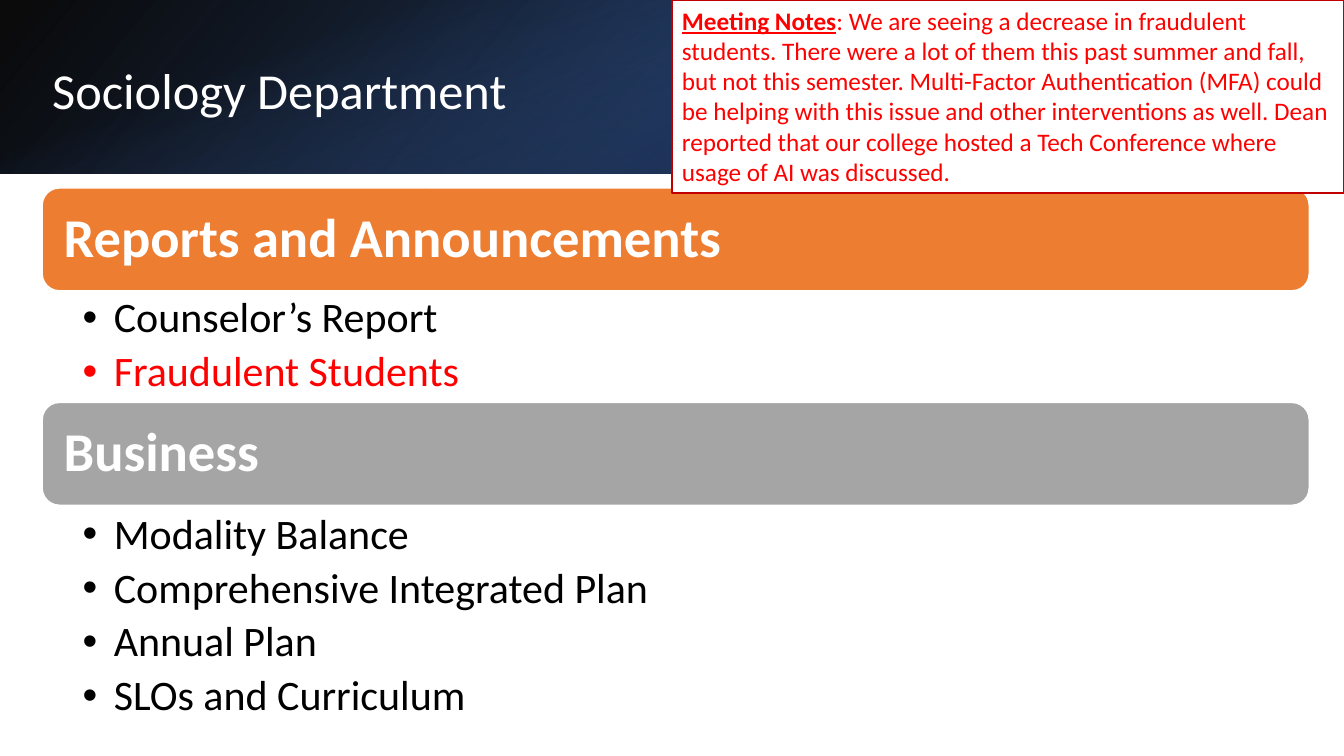
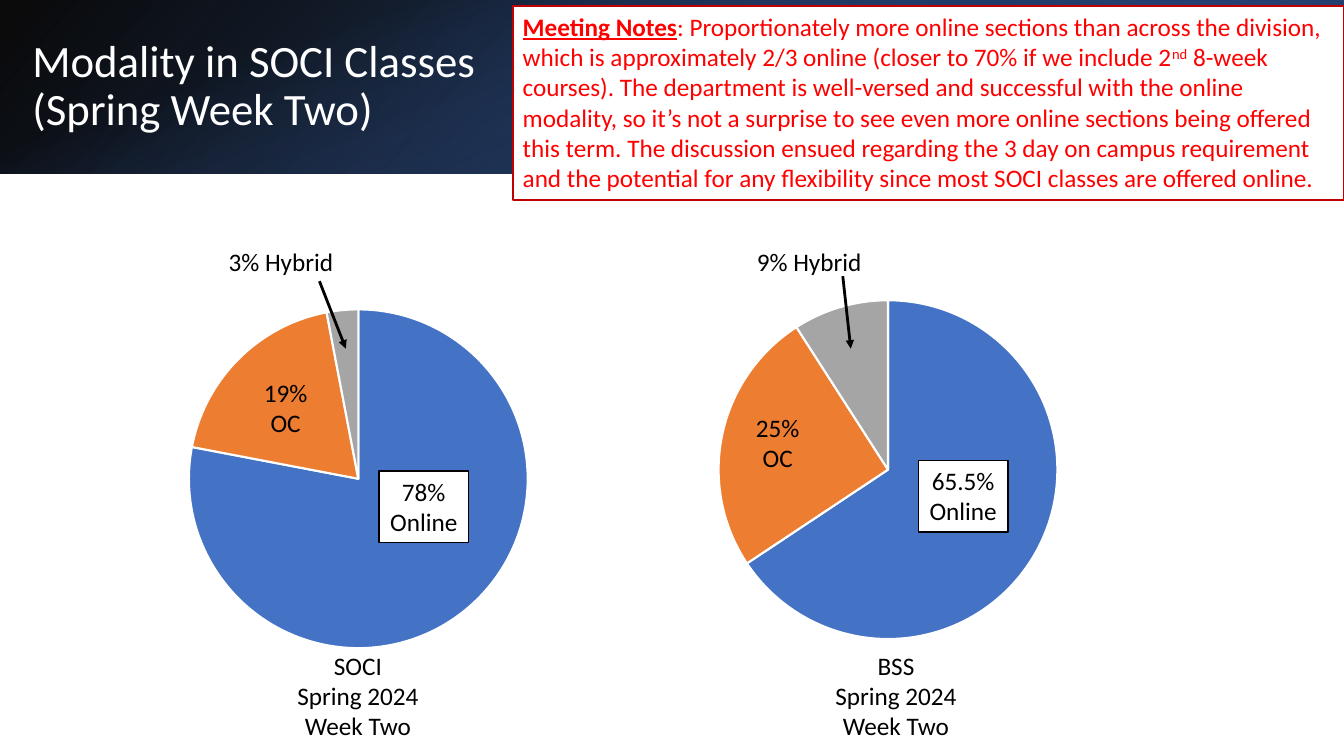
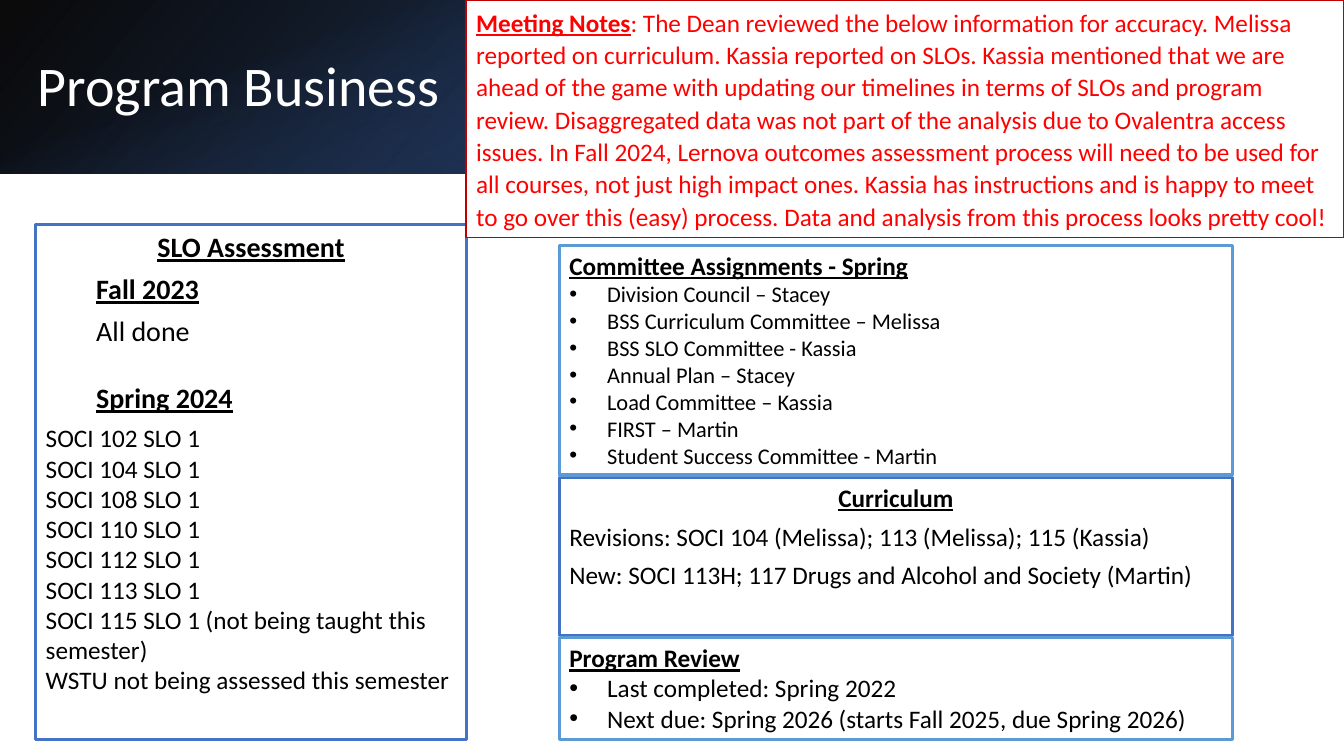
from dataclasses import dataclass

from lxml import etree
from pptx import Presentation
from pptx.chart.data import CategoryChartData
from pptx.dml.color import RGBColor
from pptx.enum.chart import XL_CHART_TYPE as Chart
from pptx.enum.shapes import MSO_CONNECTOR as Connector, MSO_SHAPE as Preset
from pptx.enum.text import MSO_ANCHOR as Anchor, PP_ALIGN as Align
from pptx.oxml.ns import qn
from pptx.slide import Slide
from pptx.util import Pt

WIDTH, HEIGHT, BAND = 960, 540, 124
FONT = "Calibri"
COLORS = {
    "black": "000000", "white": "FFFFFF", "red": "FF0000", "dark_red": "C00000",
    "blue": "4472C4", "mid_blue": "2F5597", "navy": "203864", "sky": "5B9BD5",
    "orange": "ED7D31", "gray": "A5A5A5", "gold": "FFC000",
}
SLICES = ("blue", "orange", "gray", "gold")

Box = tuple[float, float, float, float]
Point = tuple[float, float]


@dataclass(frozen=True)
class Run:
    text: str
    heading: bool = False
    superscript: bool = False


@dataclass(frozen=True)
class Para:
    """One paragraph; None takes the format of its text block."""
    content: str | tuple[Run, ...]
    heading: bool = False
    size: float | None = None
    color: str | None = None
    align: Align | None = None
    indent: float = 0
    bullet: bool = False
    after: float = 0


@dataclass(frozen=True)
class Sheen:
    """One translucent gradient layer of the title band."""
    box: Box
    stops: tuple[tuple[float, str, int], ...]
    angle: float
    rotation: float = 0
    flip: bool = False


@dataclass(frozen=True)
class Section:
    heading: str
    color: str
    top: float
    list_top: float
    list_height: float
    items: tuple[Para, ...]


@dataclass(frozen=True)
class Modality:
    """A pie of class modalities with its labels."""
    group: str
    frame: Box
    shares: tuple[float, ...]
    online: str
    online_at: Point
    campus: str
    campus_at: Point
    hybrid: str
    hybrid_at: Point
    arrow: tuple[Point, Point]
    caption_at: Point


SHEENS = (
    Sheen((0, 0, WIDTH, BAND), ((0, "black", 96), (1, "mid_blue", 100)), 140, flip=True),
    Sheen((640, 0, 320, BAND), ((0.19, "navy", 68), (1, "blue", 79)), 320, 180, True),
    Sheen(((WIDTH - BAND) / 2, (BAND - WIDTH) / 2, BAND, WIDTH),
          ((0.23, "blue", 0), (0.99, "black", 74)), 340, 90),
)


def rgb(name: str) -> RGBColor:
    return RGBColor.from_string(COLORS[name])


def points(values: tuple[float, ...]) -> list[Pt]:
    return [Pt(value) for value in values]


def add_text(slide: Slide, box: Box, paras: tuple[Para, ...], *, size: float = 18,
             color: str = "black", align: Align = Align.LEFT, anchor: Anchor = Anchor.TOP,
             spacing: float = 1, wrap: bool = True, preset: Preset = Preset.RECTANGLE,
             fill: str | None = None, line: str | None = None, weight: float = 1,
             left: float = 7.2, right: float = 7.2, underline: bool = True) -> None:
    """Draw a text block, with a fill and an outline when they are given."""
    if fill or line:
        block = slide.shapes.add_shape(preset, *points(box))
        block.shadow.inherit = False
        if fill:
            block.fill.solid()
            block.fill.fore_color.rgb = rgb(fill)
        else:
            block.fill.background()
        block.line.color.rgb = rgb(line or fill)
        block.line.width = Pt(weight)
    else:
        block = slide.shapes.add_textbox(*points(box))
    frame = block.text_frame
    frame.word_wrap = wrap
    frame.vertical_anchor = anchor
    frame.margin_left, frame.margin_right = points((left, right))
    frame.margin_top = frame.margin_bottom = Pt(3.6)
    for index, para in enumerate(paras):
        paragraph = frame.add_paragraph() if index else frame.paragraphs[0]
        paragraph.alignment = para.align or align
        paragraph.line_spacing = spacing
        paragraph.space_after = Pt(para.after)
        if para.indent:
            properties = paragraph._p.get_or_add_pPr()
            properties.set("marL", str(Pt(para.indent)))
            if para.bullet:
                properties.set("indent", str(-Pt(para.indent)))
                etree.SubElement(properties, qn("a:buFont"), typeface="Arial")
                etree.SubElement(properties, qn("a:buChar"), char="•")
        content = para.content
        runs = (Run(content, para.heading),) if isinstance(content, str) else content
        for part in runs:
            run = paragraph.add_run()
            run.text = part.text
            font = run.font
            font.name, font.size = FONT, Pt(para.size or size)
            font.color.rgb = rgb(para.color or color)
            font.bold = part.heading
            font.underline = part.heading and underline
            if part.superscript:
                run._r.get_or_add_rPr().set("baseline", "30000")


def add_band(slide: Slide) -> None:
    for sheen in SHEENS:
        layer = slide.shapes.add_shape(Preset.RECTANGLE, *points(sheen.box))
        layer.shadow.inherit = False
        layer.line.fill.background()
        layer.rotation = sheen.rotation
        if sheen.flip:
            layer.element.spPr.get_or_add_xfrm().set("flipH", "1")
        layer.fill.gradient()
        layer.fill.gradient_angle = 360 - sheen.angle
        for stop, (position, color, _) in zip(layer.fill.gradient_stops, sheen.stops):
            stop.position = position
            stop.color.rgb = rgb(color)
        tints = layer.element.spPr.iter(qn("a:srgbClr"))
        for tint, (_, _, opacity) in zip(list(tints), sheen.stops):
            etree.SubElement(tint, qn("a:alpha"), val=str(opacity * 1000))


def start_slide(deck: Presentation, title: str, box: Box, size: float) -> Slide:
    slide = deck.slides.add_slide(deck.slide_layouts[6])
    add_band(slide)
    add_text(slide, box, (Para(title),), size=size, color="white",
             anchor=Anchor.MIDDLE, spacing=0.9)
    return slide


def add_notes_box(slide: Slide, box: Box, *runs: Run, spacing: float = 1) -> None:
    add_text(slide, box, (Para((Run("Meeting Notes", heading=True), *runs)),),
             color="red", fill="white", line="dark_red", weight=1.25, spacing=spacing)


def add_arrow(slide: Slide, start: Point, end: Point) -> None:
    arrow = slide.shapes.add_connector(Connector.STRAIGHT, *points((*start, *end)))
    arrow.line.color.rgb = rgb("black")
    arrow.line.width = Pt(2)
    etree.SubElement(arrow.line._get_or_add_ln(), qn("a:tailEnd"), type="triangle")
    etree.SubElement(arrow.element.spPr, qn("a:effectLst"))


def add_pie(slide: Slide, box: Box, shares: tuple[float, ...], diameter: float = 242) -> None:
    data = CategoryChartData()
    data.categories = [str(number + 1) for number in range(len(shares))]
    data.add_series("Series 1", shares)
    chart = slide.shapes.add_chart(Chart.PIE, *points(box), data).chart
    chart.has_title = chart.has_legend = False
    chart.font.name, chart.font.size = FONT, Pt(10)
    chart.font.color.rgb = rgb("black")
    plot = chart.plots[0]
    plot.vary_by_categories = False
    for index, color in enumerate(SLICES[:len(shares)]):
        look = plot.series[0].points[index].format
        look.fill.solid()
        look.fill.fore_color.rgb = rgb(color)
        look.line.color.rgb = rgb("white")
        look.line.width = Pt(1.5)
    area = chart._chartSpace.chart.plotArea
    for old in area.findall(qn("c:layout")):
        area.remove(old)
    layout = etree.Element(qn("c:layout"))
    area.insert(0, layout)
    manual = etree.SubElement(layout, qn("c:manualLayout"))
    wide, high = diameter / box[2], diameter / box[3]
    for tag, value in (("layoutTarget", "inner"), ("xMode", "edge"), ("yMode", "edge"),
                       ("x", (1 - wide) / 2), ("y", (1 - high) / 2), ("w", wide), ("h", high)):
        etree.SubElement(manual, qn(f"c:{tag}"), val=str(value))


def add_modality(slide: Slide, pie: Modality) -> None:
    add_pie(slide, pie.frame, pie.shares)
    centered = {"align": Align.CENTER, "wrap": False}
    add_text(slide, (*pie.online_at, 64, 51), (Para(pie.online), Para("Online")),
             fill="white", line="black", **centered)
    add_text(slide, (*pie.campus_at, 50, 51), (Para(pie.campus), Para("OC")), **centered)
    add_text(slide, (*pie.hybrid_at, 90, 29), (Para(pie.hybrid),), wrap=False)
    add_arrow(slide, *pie.arrow)
    add_text(slide, (*pie.caption_at, 102, 73),
             (Para(pie.group), Para("Spring 2024"), Para("Week Two")), **centered)


def bullets(*items: str, indent: float = 27, after: float = 0,
            size: float | None = None) -> tuple[Para, ...]:
    return tuple(Para(item, size=size, indent=indent, bullet=True, after=after)
                 for item in items)


def build_agenda(deck: Presentation) -> None:
    slide = start_slide(deck, "Sociology Department", (30.2, 32, 610, 69), 36)
    agenda_list = {"indent": 22.3, "after": 6}
    sections = (
        Section("Reports and Announcements", "orange", 134.3, 208.4, 81, (
            *bullets("Counselor’s Report", **agenda_list),
            Para("Fraudulent Students", color="red", bullet=True, **agenda_list))),
        Section("Business", "gray", 287.5, 363, 162, bullets(
            "Modality Balance", "Comprehensive Integrated Plan", "Annual Plan",
            "SLOs and Curriculum", **agenda_list)),
    )
    left, width, bar_height = 30.2, 905, 73.4
    for section in sections:
        add_text(slide, (left, section.top, width, bar_height),
                 (Para(section.heading, heading=True),), size=39, color="white",
                 anchor=Anchor.MIDDLE, spacing=0.9, preset=Preset.ROUNDED_RECTANGLE,
                 fill=section.color, line="white", left=11.8, right=11.8, underline=False)
        add_text(slide, (left, section.list_top, width, section.list_height),
                 section.items, size=30, spacing=0.9, left=28.8, right=21.6)
    add_notes_box(slide, (480, 0, 480, 138), Run(
        ": We are seeing a decrease in fraudulent students. There were a lot of them this "
        "past summer and fall, but not this semester. Multi-Factor Authentication (MFA) could "
        "be helping with this issue and other interventions as well. Dean reported that our "
        "college hosted a Tech Conference where usage of AI was discussed."))


def build_modality(deck: Presentation) -> None:
    slide = start_slide(deck, "Modality in SOCI Classes (Spring Week Two)",
                        (16, 43.5, 381, 37.5), 32)
    pies = (
        Modality("SOCI", (93.6, 211, 324.7, 262), (78, 19, 3), "78%", (270.7, 336.5),
                 "19%", (179, 265.7), "3% Hybrid", (156.2, 172.5),
                 ((228.2, 200.9), (247, 249)), (204.7, 460.8)),
        Modality("BSS", (494.6, 204.5, 279.4, 262), (65, 25, 9, 0), "65.5%", (656, 329),
                 "25%", (530.5, 290.9), "9% Hybrid", (533.5, 172.5),
                 ((602, 197.3), (607.7, 249)), (589, 460.8)),
    )
    for pie in pies:
        add_modality(slide, pie)
    add_notes_box(
        slide, (366.3, 4.5, 593.7, 138.2),
        Run(": Proportionately more online sections than across the division, which is "
            "approximately 2/3 online (closer to 70% if we include 2"),
        Run("nd", superscript=True),
        Run(" 8-week courses). The department is well-versed and successful with the online "
            "modality, so it’s not a surprise to see even more online sections being offered "
            "this term. The discussion ensued regarding the 3 day on campus requirement and "
            "the potential for any flexibility since most SOCI classes are offered online."))


def build_business(deck: Presentation) -> None:
    slide = start_slide(deck, "Program Business", (20, 29.5, 307.5, 67), 40)
    courses = (*(f"SOCI {number} SLO 1" for number in (102, 104, 108, 110, 112, 113)),
               "SOCI 115 SLO 1 (not being taught this semester)",
               "WSTU not being assessed this semester")
    add_text(slide, (25.6, 160.5, 307.5, 368), (
        Para("SLO Assessment", heading=True, size=20, align=Align.CENTER, after=6),
        Para("Fall 2023", heading=True, size=20, indent=36, after=6),
        Para("All done", size=20, indent=36, after=23.9),
        Para("Spring 2024", heading=True, size=20, indent=36, after=6),
        *map(Para, courses)), line="blue", weight=2.25)
    left, width = 399.6, 480.7
    add_text(slide, (left, 341, width, 113), (
        Para("Curriculum", heading=True, align=Align.CENTER, after=6),
        Para("Revisions: SOCI 104 (Melissa); 113 (Melissa); 115 (Kassia)", after=6),
        Para("New: SOCI 113H; 117 Drugs and Alcohol and Society (Martin)", after=6)),
        line="blue", weight=2.25)
    add_text(slide, (left, 455.4, width, 72.7), (
        Para("Program Review", heading=True),
        *bullets("Last completed: Spring 2022",
                 "Next due: Spring 2026 (starts Fall 2025, due Spring 2026)")),
        line="sky", weight=2.5)
    add_text(slide, (left, 175.2, width, 164), (
        Para("Committee Assignments - Spring", heading=True),
        *bullets("Division Council – Stacey", "BSS Curriculum Committee – Melissa",
                 "BSS SLO Committee - Kassia", "Annual Plan – Stacey",
                 "Load Committee – Kassia", "FIRST – Martin",
                 "Student Success Committee - Martin", size=16)),
        line="sky", weight=2.5)
    add_notes_box(slide, (333, 0, 627, 169.6), Run(
        ": The Dean reviewed the below information for accuracy. Melissa reported on "
        "curriculum. Kassia reported on SLOs. Kassia mentioned that we are ahead of the game "
        "with updating our timelines in terms of SLOs and program review. Disaggregated data "
        "was not part of the analysis due to Ovalentra access issues. In Fall 2024, Lernova "
        "outcomes assessment process will need to be used for all courses, not just high "
        "impact ones. Kassia has instructions and is happy to meet to go over this (easy) "
        "process. Data and analysis from this process looks pretty cool!"), spacing=1.07)


def main() -> None:
    deck = Presentation()
    deck.slide_width, deck.slide_height = Pt(WIDTH), Pt(HEIGHT)
    build_agenda(deck)
    build_modality(deck)
    build_business(deck)
    deck.save("out.pptx")


if __name__ == "__main__":
    main()
